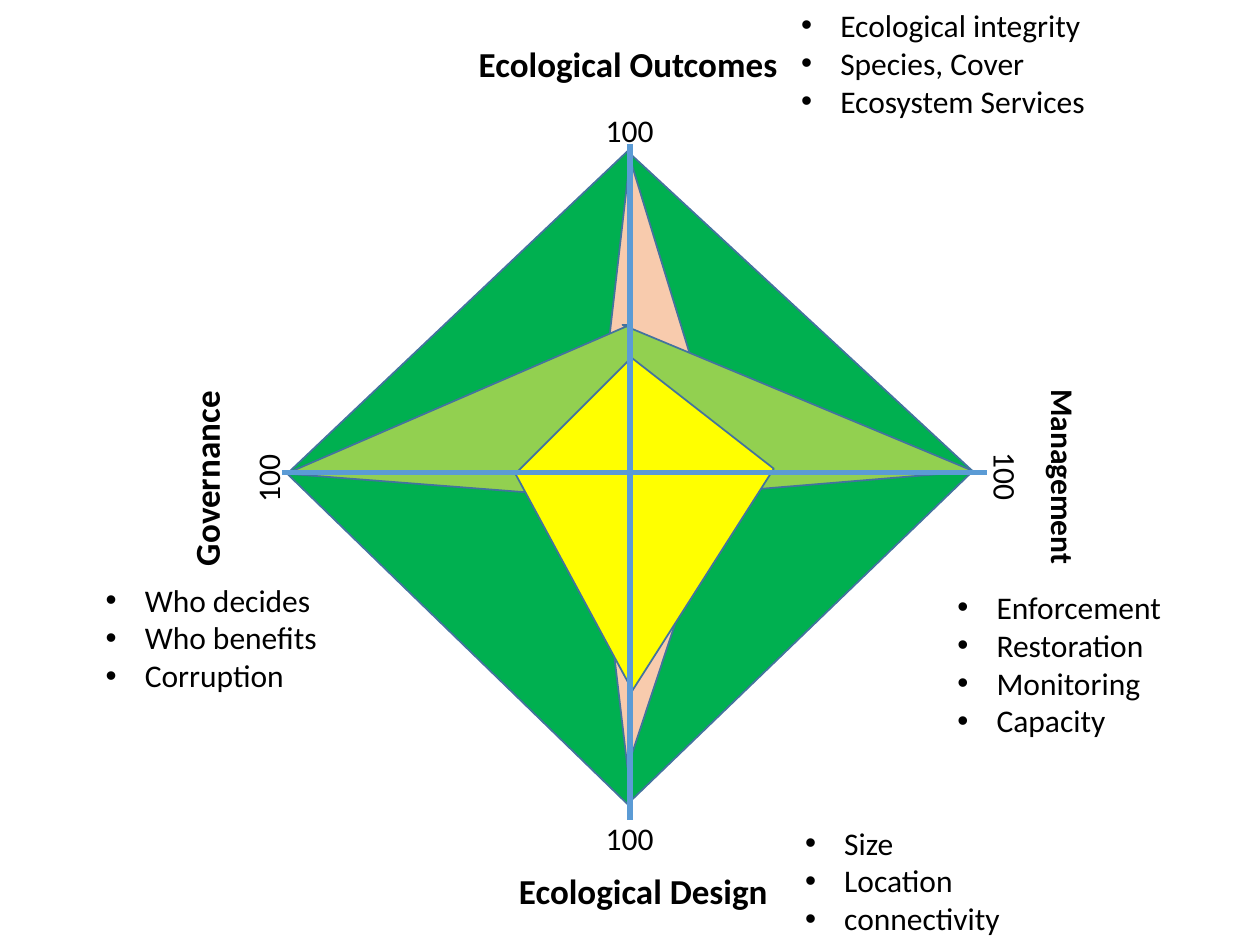
from lxml.etree import SubElement
from pptx import Presentation
from pptx.dml.color import RGBColor
from pptx.enum.shapes import MSO_CONNECTOR as CONNECTOR
from pptx.enum.text import MSO_AUTO_SIZE as AUTO_SIZE
from pptx.oxml.ns import qn
from pptx.util import Cm, Pt


def paint(color_format, hex_color):
    """Set a colour format to a hex colour."""
    color_format.rgb = RGBColor.from_string(hex_color)


def add_text(box, lines, size, bold=False, bulleted=False):
    """Add an unwrapped text box with one paragraph per line."""
    textbox = slide.shapes.add_textbox(*map(Cm, box))
    frame = textbox.text_frame
    frame.word_wrap = False
    frame.auto_size = AUTO_SIZE.SHAPE_TO_FIT_TEXT
    for index, line in enumerate(lines):
        paragraph = frame.add_paragraph() if index else frame.paragraphs[0]
        run = paragraph.add_run()
        run.text = line
        run.font.name = "Calibri"
        run.font.size = Pt(size)
        run.font.bold = bold
        paint(run.font.color, "000000")
        if bulleted:
            properties = paragraph._p.get_or_add_pPr()
            properties.set("marL", str(Cm(0.79)))
            properties.set("indent", str(-Cm(0.79)))
            SubElement(properties, qn("a:buFont")).set("typeface", "Arial")
            SubElement(properties, qn("a:buChar")).set("char", "•")
    return textbox


prs = Presentation()
prs.slide_width, prs.slide_height = Cm(25.4), Cm(19.05)
slide = prs.slides.add_slide(prs.slide_layouts[6])

# Score profiles, from back to front
profiles = [
    ("00B050", [(12.65, 3.05), (5.79, 9.55), (12.65, 16.21), (19.61, 9.5)]),
    ("F8CBAD", [(12.7, 3.2), (11.96, 9.63), (12.65, 15.47), (14.63, 9.5)]),
    ("92D050", [(12.7, 6.55), (5.77, 9.55), (12.62, 10.08), (19.63, 9.5),
                (12.55, 6.55)]),
    ("FFFF00", [(12.73, 7.21), (10.39, 9.55), (12.75, 13.92), (15.6, 9.45)]),
]
for fill_color, scores in profiles:
    corners = [(Cm(x), Cm(y)) for x, y in scores]
    builder = slide.shapes.build_freeform(*corners[0])
    builder.add_line_segments(corners[1:], close=True)
    profile = builder.convert_to_shape()
    profile.shadow.inherit = False
    profile.fill.solid()
    paint(profile.fill.fore_color, fill_color)
    paint(profile.line.color, "43739E")
    profile.line.width = Pt(1)

# Axes
for ends in [(12.7, 2.9, 12.7, 16.54), (5.69, 9.53, 19.89, 9.53)]:
    axis = slide.shapes.add_connector(CONNECTOR.STRAIGHT, *map(Cm, ends))
    paint(axis.line.color, "5B9BD5")
    axis.line.width = Pt(3)
    SubElement(axis._element.spPr, qn("a:effectLst"))

# Dimension names
dimensions = [
    ("Ecological Outcomes", (9.4, 0.74, 6.58, 1.12), 20, 0),
    ("Governance", (2.13, 9.07, 4.06, 1.12), 20, 270),
    ("Management", (19.41, 9.12, 4.06, 1.02), 18, 90),
    ("Ecological Design", (10.21, 17.4, 5.56, 1.12), 20, 0),
]
for dimension, box, size, angle in dimensions:
    add_text(box, [dimension], size, bold=True).rotation = angle

# Axis maximums
for left, top, angle in [(11.96, 2.11, 0), (19.53, 9.12, 90),
                         (4.65, 9.12, 270), (11.96, 16.38, 0)]:
    add_text((left, top, 1.5, 1.02), ["100"], 18).rotation = angle

# Criteria of each dimension
criteria = [
    ((15.9, 0, 6.3, 2.57),
     ["Ecological integrity", "Species, Cover", "Ecosystem Services"]),
    ((19.05, 11.73, 4.75, 3.33),
     ["Enforcement", "Restoration", "Monitoring", "Capacity"]),
    ((15.98, 16.48, 4.5, 2.57), ["Size", "Location", "connectivity"]),
    ((1.88, 11.58, 4.83, 2.57), ["Who decides", "Who benefits", "Corruption"]),
]
for box, items in criteria:
    add_text(box, items, 18, bulleted=True)

prs.save("out.pptx")
